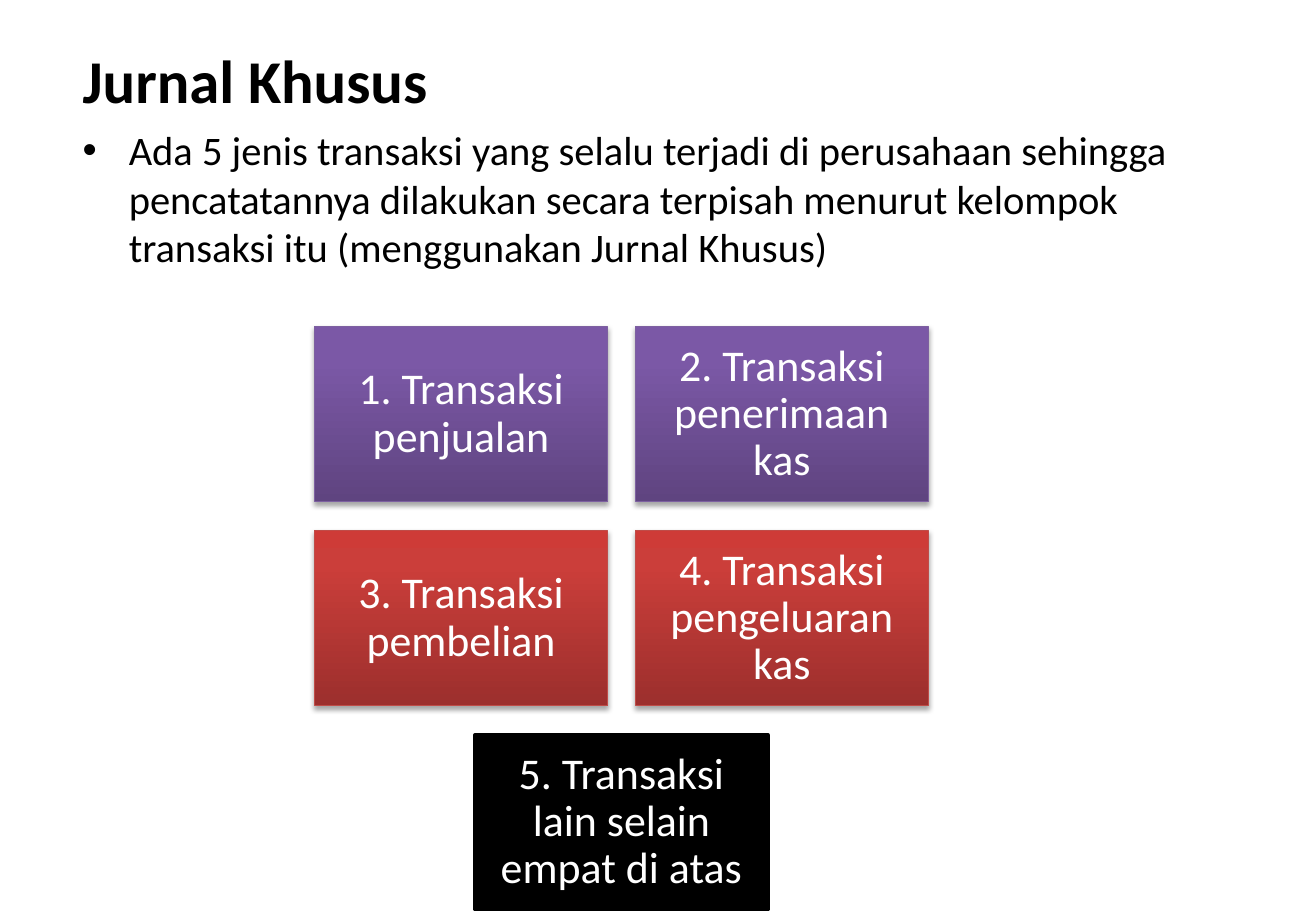
from lxml.etree import SubElement
from pptx import Presentation
from pptx.dml.color import RGBColor
from pptx.enum.shapes import MSO_SHAPE
from pptx.enum.text import MSO_ANCHOR, MSO_AUTO_SIZE, PP_ALIGN
from pptx.oxml import parse_xml
from pptx.oxml.ns import nsdecls, qn
from pptx.util import Inches, Pt

COLORS = {
    "text": "000000",
    "white": "FFFFFF",
    "black": "000000",
    "purple": "7D60A0",
    "red": "BF4C48",
}
GRADIENTS = {
    "purple": ((0, "5F4480"), (80, "7B58A6"), (100, "7C57A8")),
    "red": ((0, "9C2F2D"), (80, "CB3E3A"), (100, "CE3B37")),
}
BOX_W, BOX_H = 2.41, 1.44
LEFT, TOP = 2.59, 2.69
STEP_X, STEP_Y = 2.64, 1.68


class SlideBuilder:
    font = "Calibri"

    def __init__(self, s):
        self.s = s

    def add_run(self, p, text, size, color, bold=False):
        r = p.add_run()
        r.text = text
        r.font.name = self.font
        r.font.size = Pt(size)
        r.font.bold = bold
        r.font.color.rgb = RGBColor.from_string(COLORS[color])

    def place(self, sp, x, y, w, h):
        sp.left, sp.top = Inches(x), Inches(y)
        sp.width, sp.height = Inches(w), Inches(h)
        tf = sp.text_frame
        tf.word_wrap = True
        tf.auto_size = MSO_AUTO_SIZE.NONE
        tf.vertical_anchor = MSO_ANCHOR.TOP
        p = tf.paragraphs[0]
        p.alignment = PP_ALIGN.LEFT
        p.space_before = Pt(0)
        return p

    def title(self, text, x, y, w, h):
        p = self.place(self.s.shapes.title, x, y, w, h)
        self.add_run(p, text, 36, "text", True)

    def bullet(self, text, x, y, w, h):
        p = self.place(self.s.placeholders[1], x, y, w, h)
        pPr = p._p.get_or_add_pPr()
        pPr.set("marL", str(Inches(0.38)))
        pPr.set("indent", str(-Inches(0.38)))
        SubElement(pPr, qn("a:buFont"), typeface="Arial")
        SubElement(pPr, qn("a:buChar"), char="•")
        self.add_run(p, text, 24, "text")

    def gradient(self, sp, stops):
        gs = "".join(
            f'<a:gs pos="{pos * 1000}"><a:srgbClr val="{color}"/></a:gs>'
            for pos, color in stops
        )
        fill = parse_xml(
            f'<a:gradFill {nsdecls("a")} rotWithShape="1"><a:gsLst>{gs}</a:gsLst>'
            '<a:lin ang="16200000" scaled="0"/></a:gradFill>'
        )
        sp._element.spPr.find(qn("a:prstGeom")).addnext(fill)

    def drop_shadow(self, sp):
        effects = sp._element.spPr.find(qn("a:effectLst"))
        effects.append(parse_xml(
            f'<a:outerShdw {nsdecls("a")} blurRad="{Pt(3.1)}" dist="{Pt(1.8)}" '
            'dir="5400000" rotWithShape="0"><a:srgbClr val="000000">'
            '<a:alpha val="35000"/></a:srgbClr></a:outerShdw>'
        ))

    def box(self, text, x, y, color):
        sp = self.s.shapes.add_shape(
            MSO_SHAPE.RECTANGLE, Inches(x), Inches(y), Inches(BOX_W), Inches(BOX_H)
        )
        rgb = RGBColor.from_string(COLORS[color])
        sp.line.color.rgb = rgb
        sp.shadow.inherit = False
        if color in GRADIENTS:
            sp.line.width = Pt(0.75)
            self.gradient(sp, GRADIENTS[color])
            self.drop_shadow(sp)
        else:
            sp.line.width = Pt(2)
            sp.fill.solid()
            sp.fill.fore_color.rgb = rgb
        tf = sp.text_frame
        tf.word_wrap = True
        tf.vertical_anchor = MSO_ANCHOR.MIDDLE
        tf.margin_left = tf.margin_right = Inches(0.11)
        tf.margin_top = tf.margin_bottom = Inches(0.11)
        p = tf.paragraphs[0]
        p.alignment = PP_ALIGN.CENTER
        p.line_spacing = 0.9
        self.add_run(p, text, 26, "white")


def main():
    prs = Presentation()
    prs.slide_width, prs.slide_height = Inches(10.83), Inches(7.5)
    slide = SlideBuilder(prs.slides.add_slide(prs.slide_layouts[1]))
    slide.title("Jurnal Khusus", 0.58, 0.3, 9.71, 0.68)
    slide.bullet(
        "Ada 5 jenis transaksi yang selalu terjadi di perusahaan sehingga "
        "pencatatannya dilakukan secara terpisah menurut kelompok transaksi itu "
        "(menggunakan Jurnal Khusus)",
        0.58, 0.98, 9.71, 1.4,
    )
    transactions = (
        ("1. Transaksi penjualan", 0, 0, "purple"),
        ("2. Transaksi penerimaan kas", 1, 0, "purple"),
        ("3. Transaksi pembelian", 0, 1, "red"),
        ("4. Transaksi pengeluaran kas", 1, 1, "red"),
        ("5. Transaksi lain selain empat di atas", 0.5, 2, "black"),
    )
    for text, col, row, color in transactions:
        slide.box(text, LEFT + col * STEP_X, TOP + row * STEP_Y, color)
    prs.save("out.pptx")


if __name__ == "__main__":
    main()
